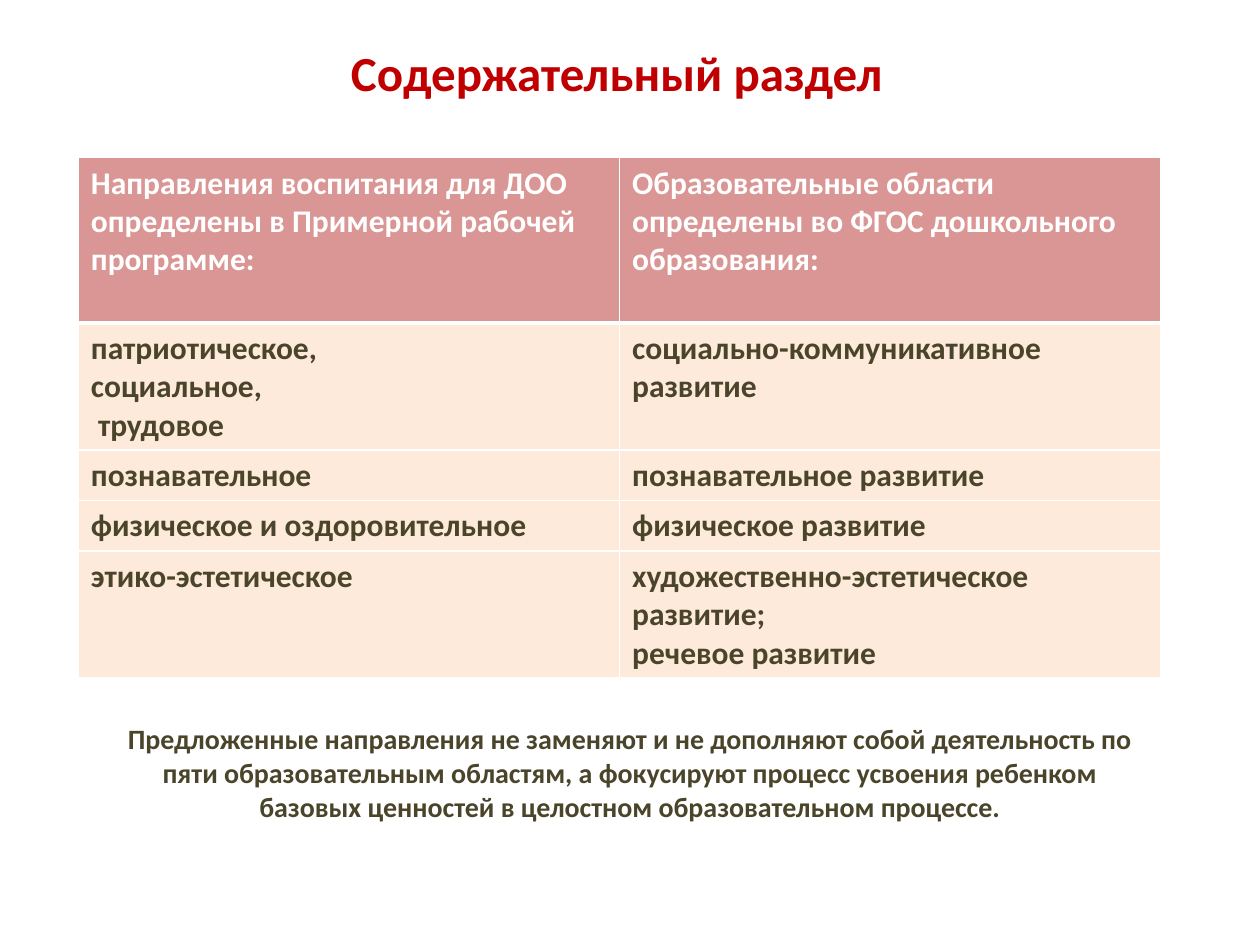
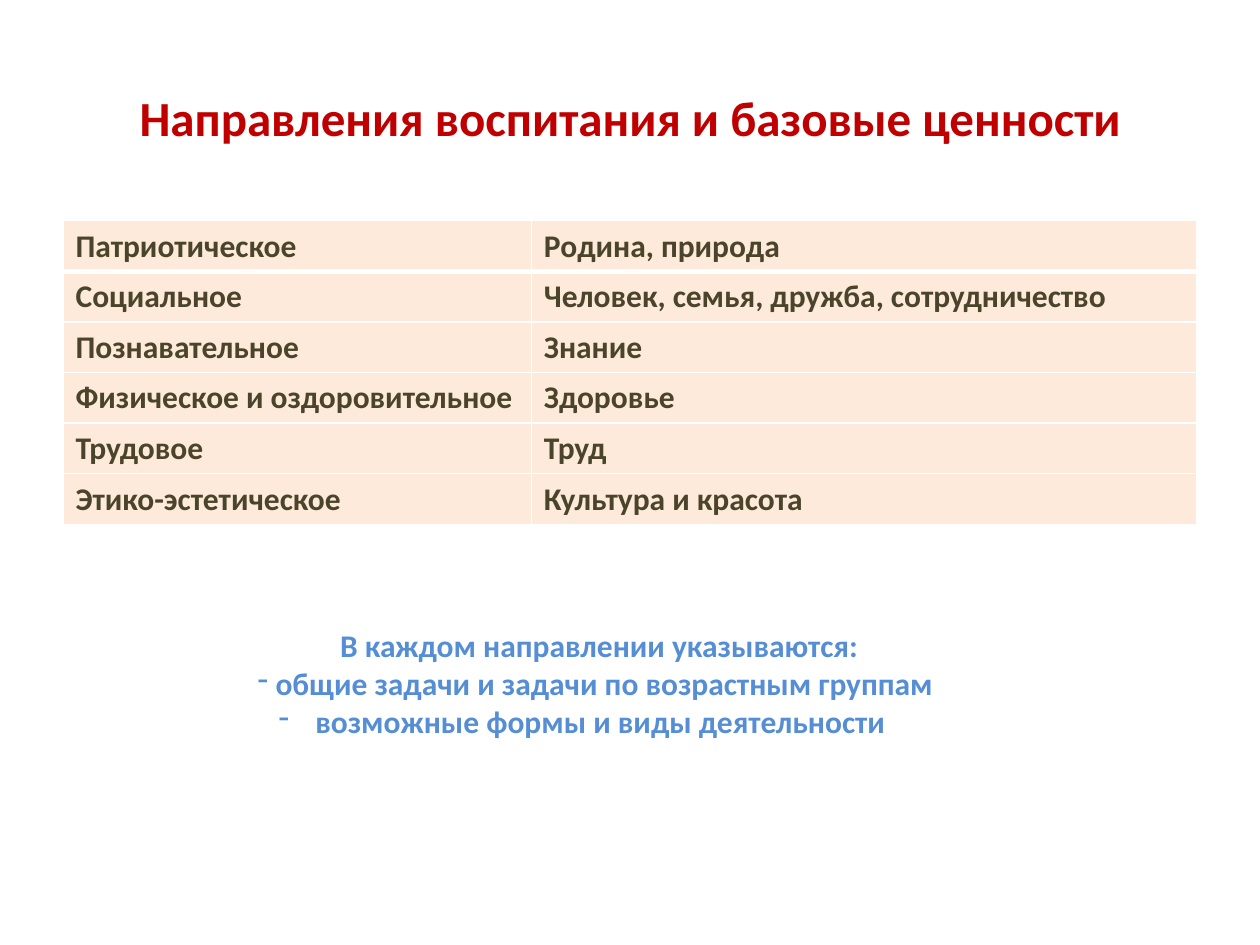
from dataclasses import dataclass

from lxml import etree
from pptx import Presentation
from pptx import util as u
from pptx.dml import color
from pptx.enum import text
from pptx.oxml import ns


@dataclass(frozen=True)
class Theme:
    font: str = "Calibri"
    title: str = "C00000"
    head: str = "D99694"
    cell: str = "FDEADA"
    dark: str = "4A452A"
    light: str = "FFFFFF"
    accent: str = "558ED5"
    title_size: int = 28
    body_size: int = 18
    note_size: int = 16


T = Theme()

# Content: all boxes are left, top, width, height in centimetres
SECTION = {
    "title": "Содержательный раздел",
    "title_box": (1, 0.54, 22.86, 1.82),
    "table_at": (1.58, 3.18),
    "cols": (10.91, 10.91),
    "lines": (4, 3, 1, 1, 3),
    "header": True,
    "rows": [
        (["Направления воспитания для ДОО определены в Примерной рабочей программе:"],
         ["Образовательные области определены во ФГОС дошкольного образования:"]),
        (["патриотическое,", "социальное,", " трудовое"],
         ["социально-коммуникативное развитие"]),
        (["познавательное"], ["познавательное развитие"]),
        (["физическое и оздоровительное"], ["физическое развитие"]),
        (["этико-эстетическое"],
         ["художественно-эстетическое развитие;", "речевое развитие"]),
    ],
}
NOTE = ("Предложенные направления не заменяют и не дополняют собой деятельность по "
        "пяти образовательным областям, а фокусируют процесс усвоения ребенком "
        "базовых ценностей в целостном образовательном процессе.")
NOTE_BOX = (2.16, 14.43, 21.08, 3)

VALUES = {
    "title": "Направления воспитания и базовые ценности",
    "title_box": (1.27, 0.76, 22.86, 3.18),
    "table_at": (1.27, 4.45),
    "cols": (9.44, 13.42),
    "lines": (1,) * 6,
    "header": False,
    "rows": [
        (["Патриотическое"], ["Родина, природа"]),
        (["Социальное"], ["Человек, семья, дружба, сотрудничество"]),
        (["Познавательное"], ["Знание"]),
        (["Физическое и оздоровительное"], ["Здоровье"]),
        (["Трудовое"], ["Труд"]),
        (["Этико-эстетическое"], ["Культура и красота"]),
    ],
}
TASKS_HEAD = "В каждом направлении указываются:"
# Item, hanging indent, right margin
TASKS = [
    ("общие задачи и задачи по возрастным группам", 0.36, 0.15),
    ("возможные формы и виды деятельности", 0.74, 0.69),
]
TASKS_BOX = (4.44, 12.5, 15.28, 2.57)

LINE_HEIGHT, CELL_PADDING = 0.77, 0.25


def cm(values):
    return [u.Cm(v) for v in values]


def add_run(p, words, size, rgb):
    r = p.add_run()
    r.text = words
    r.font.name, r.font.size, r.font.bold = T.font, u.Pt(size), True
    r.font.color.rgb = color.RGBColor.from_string(rgb)


def add_paragraph(tf, first):
    return tf.paragraphs[0] if first else tf.add_paragraph()


def add_text(s, box, items, size, rgb, anchor=text.MSO_ANCHOR.TOP):
    tf = s.shapes.add_textbox(*cm(box)).text_frame
    tf.word_wrap, tf.vertical_anchor = True, anchor
    for i, words in enumerate(items):
        p = add_paragraph(tf, i == 0)
        p.alignment = text.PP_ALIGN.CENTER
        add_run(p, words, size, rgb)
    return tf


def add_dash(p, hang, right):
    pPr = p._p.get_or_add_pPr()
    for key, value in (("marL", hang), ("marR", right), ("indent", -hang)):
        pPr.set(key, str(int(u.Cm(value))))
    etree.SubElement(pPr, ns.qn("a:buChar")).set("char", "-")


def set_borders(cell, bottom):
    tcPr = cell._tc.get_or_add_tcPr()
    for side, width in (("L", 1), ("R", 1), ("T", 1), ("B", bottom)):
        ln = etree.SubElement(tcPr, ns.qn("a:ln" + side), w=str(int(u.Pt(width))))
        fill = etree.SubElement(ln, ns.qn("a:solidFill"))
        etree.SubElement(fill, ns.qn("a:srgbClr"), val=T.light)


def add_grid(s, data):
    heights = [n * LINE_HEIGHT + CELL_PADDING for n in data["lines"]]
    size = sum(data["cols"]), sum(heights)
    table = s.shapes.add_table(len(heights), len(data["cols"]),
                               *cm(data["table_at"] + size)).table
    for column, width in zip(table.columns, data["cols"]):
        column.width = u.Cm(width)
    for i, (row, height) in enumerate(zip(data["rows"], heights)):
        table.rows[i].height = u.Cm(height)
        is_head = data["header"] and i == 0
        for j, items in enumerate(row):
            cell = table.cell(i, j)
            set_borders(cell, 3 if i == 0 else 1)
            cell.fill.solid()
            cell.fill.fore_color.rgb = color.RGBColor.from_string(
                T.head if is_head else T.cell)
            for k, words in enumerate(items):
                add_run(add_paragraph(cell.text_frame, k == 0), words, T.body_size,
                        T.light if is_head else T.dark)


def add_slide(prs, data):
    s = prs.slides.add_slide(prs.slide_layouts[6])
    add_text(s, data["title_box"], [data["title"]], T.title_size, T.title,
             text.MSO_ANCHOR.MIDDLE)
    add_grid(s, data)
    return s


def main():
    prs = Presentation()
    prs.slide_width, prs.slide_height = cm((25.4, 19.05))

    # Content section with the closing note
    s = add_slide(prs, SECTION)
    add_text(s, NOTE_BOX, [NOTE], T.note_size, T.dark)

    # Base values with the dashed list
    s = add_slide(prs, VALUES)
    tf = add_text(s, TASKS_BOX, [TASKS_HEAD] + [item for item, _, _ in TASKS],
                  T.body_size, T.accent)
    for p, (_, hang, right) in zip(tf.paragraphs[1:], TASKS):
        add_dash(p, hang, right)

    prs.save("out.pptx")


if __name__ == "__main__":
    main()
